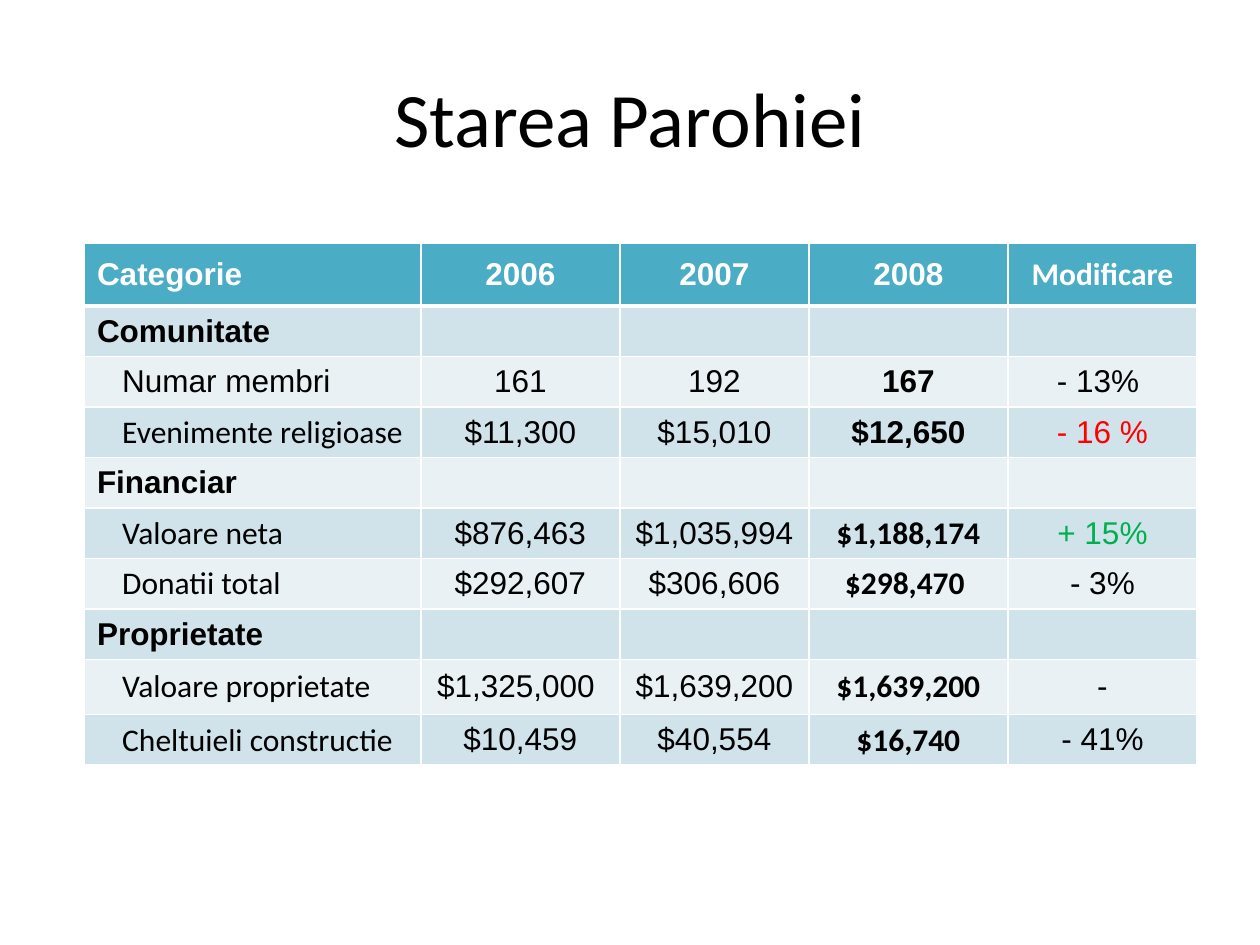
from lxml.etree import SubElement
from pptx import Presentation
from pptx.dml.color import RGBColor
from pptx.enum.text import MSO_ANCHOR, PP_ALIGN
from pptx.oxml.ns import qn
from pptx.util import Inches, Pt

COLORS = {
    "text": "000000", "white": "FFFFFF", "header": "4BACC6",
    "dark_band": "D0E3EA", "light_band": "E9F1F5",
    "loss": "FF0000", "gain": "00B050",
}
COLUMN_WIDTHS = [2.67, 1.58, 1.5, 1.58, 1.5]
ROW_HEIGHTS = [0.5] + [0.39] * 7 + [0.44, 0.39]
ROWS = [
    ["Categorie", "2006", "2007", "2008", "Modificare"],
    ["Comunitate"],
    ["Numar membri", "161", "192", "167", "- 13% "],
    ["Evenimente religioase", "$11,300", "$15,010", "$12,650", "- 16 %"],
    ["Financiar"],
    ["Valoare neta", "$876,463", "$1,035,994", "$1,188,174", "+ 15%"],
    ["Donatii total", "$292,607", "$306,606", "$298,470 ", "- 3%"],
    ["Proprietate"],
    ["Valoare proprietate", "$1,325,000 ", "$1,639,200", "$1,639,200", "-"],
    ["Cheltuieli constructie", "$10,459", "$40,554", "$16,740", "- 41%"],
]
# Cells set in Calibri, as (row, column); the others are in Arial
CALIBRI_CELLS = {(0, 4)} | {(row, 0) for row in (3, 5, 6, 8, 9)} | {
    (row, 3) for row in (5, 6, 8, 9)}
CHANGE_COLORS = {"- 16 %": "loss", "+ 15%": "gain"}


def write_text(frame, text, size=18, font="Arial", color="text", bold=False,
               align=PP_ALIGN.CENTER, indent=0):
    para = frame.paragraphs[0]
    para.alignment = align
    if indent:
        para.level = 1
        properties = para._p.get_or_add_pPr()
        properties.set("marL", str(Inches(indent)))
        properties.set("indent", "0")
    span = para.add_run()
    span.text = text
    span.font.size = Pt(size)
    span.font.name = font
    span.font.bold = bold
    span.font.color.rgb = RGBColor.from_string(COLORS[color])


def set_borders(cell, **widths):
    properties = cell._tc.get_or_add_tcPr()
    for side in "LRTB":
        line = SubElement(properties, qn(f"a:ln{side}"),
                          w=str(Pt(widths.get(side, 1))))
        fill = SubElement(line, qn("a:solidFill"))
        SubElement(fill, qn("a:srgbClr"), val=COLORS["white"])


def add_title(page, left, top, width, height):
    box = page.shapes.add_textbox(*map(Inches, (left, top, width, height)))
    frame = box.text_frame
    frame.word_wrap = True
    frame.vertical_anchor = MSO_ANCHOR.MIDDLE
    write_text(frame, "Starea Parohiei", size=44, font="Calibri")


def fill_cell(cell, row, column):
    # Borders and banding
    if row == 0:
        set_borders(cell, B=3)
        band = "header"
    else:
        set_borders(cell, T=3 if row == 1 else 1)
        band = "dark_band" if row % 2 else "light_band"
    cell.fill.solid()
    cell.fill.fore_color.rgb = RGBColor.from_string(COLORS[band])
    cell.vertical_anchor = MSO_ANCHOR.MIDDLE

    # Text; a row with a single entry is a section heading
    values = ROWS[row]
    if column >= len(values):
        return
    heading = row == 0 or len(values) == 1
    text = values[column]
    write_text(
        cell.text_frame, text,
        font="Calibri" if (row, column) in CALIBRI_CELLS else "Arial",
        color="white" if row == 0 else CHANGE_COLORS.get(text, "text"),
        bold=heading or column == 3,
        align=PP_ALIGN.CENTER if column else PP_ALIGN.LEFT,
        indent=0 if heading or column else 0.2,
    )


def add_parish_table(page, left, top):
    size = sum(COLUMN_WIDTHS), sum(ROW_HEIGHTS)
    frame = page.shapes.add_table(len(ROWS), len(COLUMN_WIDTHS),
                                  *map(Inches, (left, top, *size)))
    table = frame.table
    for column, width in zip(table.columns, COLUMN_WIDTHS):
        column.width = Inches(width)
    for row, height in zip(table.rows, ROW_HEIGHTS):
        row.height = Inches(height)
    for row in range(len(ROWS)):
        for column in range(len(COLUMN_WIDTHS)):
            fill_cell(table.cell(row, column), row, column)


def main():
    deck = Presentation()
    deck.slide_width, deck.slide_height = Inches(10), Inches(7.5)
    page = deck.slides.add_slide(deck.slide_layouts[6])
    add_title(page, 0.5, 0.3, 9, 1.25)
    add_parish_table(page, 0.67, 1.93)
    deck.save("out.pptx")


if __name__ == "__main__":
    main()
